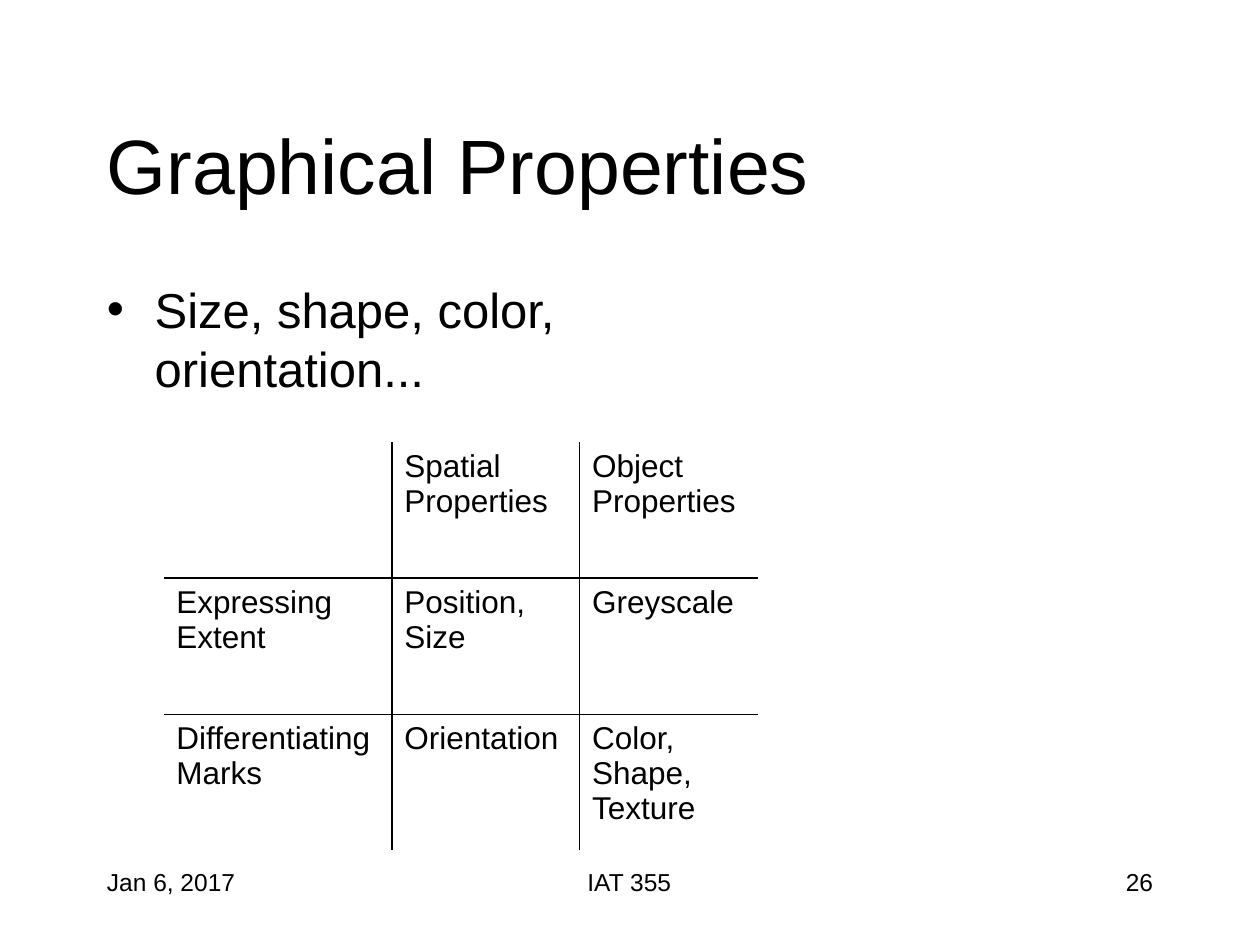
from lxml import etree
from pptx import Presentation
from pptx.dml.color import RGBColor
from pptx.enum.text import MSO_ANCHOR, PP_ALIGN
from pptx.oxml.ns import qn
from pptx.util import Pt

PX = 9144  # EMU per px, 100 px to the inch
COLOURS = {"ink": "000000", "paper": "FFFFFF"}
FONT = "Arial"

PROPERTIES = [
    ["", "Spatial Properties", "Object Properties"],
    ["Expressing Extent", "Position, Size", "Greyscale"],
    ["Differentiating Marks", "Orientation", "Color, Shape, Texture"],
]
COLUMN_WIDTHS = [181, 149, 142]
COLUMN_RULES = [1.5, 1]  # points, between neighbouring columns
ROW_RULES = [1.5, 1]  # points, between neighbouring rows


def emu(*lengths):
    return [length * PX for length in lengths]


def set_all(target, **values):
    for name, value in values.items():
        setattr(target, name, value)


def write(paragraph, words, size, **paragraph_format):
    set_all(paragraph, **paragraph_format)
    run = paragraph.add_run()
    run.text = words
    set_all(run.font, name=FONT, size=Pt(size), bold=False)
    run.font.color.rgb = RGBColor.from_string(COLOURS["ink"])


def add_text(slide, box, words, size, anchor=MSO_ANCHOR.TOP, **paragraph_format):
    frame = slide.shapes.add_textbox(*emu(*box)).text_frame
    set_all(frame, word_wrap=True, vertical_anchor=anchor)
    paragraph = frame.paragraphs[0]
    write(paragraph, words, size, **paragraph_format)
    return paragraph


def add_title(slide, box):
    add_text(slide, box, "Graphical Properties", 44, MSO_ANCHOR.MIDDLE)


def add_bullet(slide, box):
    point = add_text(slide, box, "Size, shape, color, orientation...", 28,
                     space_before=Pt(5.6))
    # Hanging bullet
    layout = point._p.get_or_add_pPr()
    layout.set("marL", str(38 * PX))
    layout.set("indent", str(-38 * PX))
    etree.SubElement(layout, qn("a:buFont"), typeface=FONT)
    etree.SubElement(layout, qn("a:buChar"), char="•")


def set_border(cell, side, width):
    line = etree.SubElement(cell._tc.get_or_add_tcPr(), qn(f"a:ln{side}"),
                            w=str(Pt(width or 1)))
    if not width:
        etree.SubElement(line, qn("a:noFill"))
        return
    fill = etree.SubElement(line, qn("a:solidFill"))
    etree.SubElement(fill, qn("a:srgbClr"), val=COLOURS["ink"])


def add_properties_table(slide, box):
    rows, columns = len(PROPERTIES), len(COLUMN_WIDTHS)
    table = slide.shapes.add_table(rows, columns, *emu(*box)).table
    set_all(table, first_row=False, horz_banding=False)
    for column, width in zip(table.columns, COLUMN_WIDTHS):
        column.width = width * PX
    for row in table.rows:
        row.height = box[3] * PX // rows

    # Inner rules only; the outer edge stays open
    across = [0, *COLUMN_RULES, 0]
    down = [0, *ROW_RULES, 0]
    for r, row in enumerate(PROPERTIES):
        for c, words in enumerate(row):
            cell = table.cell(r, c)
            borders = {"L": across[c], "R": across[c + 1],
                       "T": down[r], "B": down[r + 1]}
            for side, width in borders.items():
                set_border(cell, side, width)
            cell.fill.background()
            if words:
                write(cell.text_frame.paragraphs[0], words, 18)


def add_footer(slide, box):
    left, top, width, height = box
    side, middle = 208, 317
    parts = [
        (left, side, "Jan 6, 2017", PP_ALIGN.LEFT),
        (left + (width - middle) // 2, middle, "IAT 355", PP_ALIGN.CENTER),
        (left + width - side, side, "26", PP_ALIGN.RIGHT),
    ]
    for part_left, part_width, words, alignment in parts:
        add_text(slide, (part_left, top, part_width, height), words, 14,
                 alignment=alignment)


def main():
    deck = Presentation()
    set_all(deck, slide_width=1000 * PX, slide_height=750 * PX)
    slide = deck.slides.add_slide(deck.slide_layouts[6])
    slide.background.fill.solid()
    slide.background.fill.fore_color.rgb = RGBColor.from_string(COLOURS["paper"])

    add_footer(slide, (75, 683, 850, 50))
    add_title(slide, (75, 67, 850, 125))
    add_bullet(slide, (75, 217, 417, 450))
    add_properties_table(slide, (130, 351, 472, 324))
    deck.save("out.pptx")


if __name__ == "__main__":
    main()
